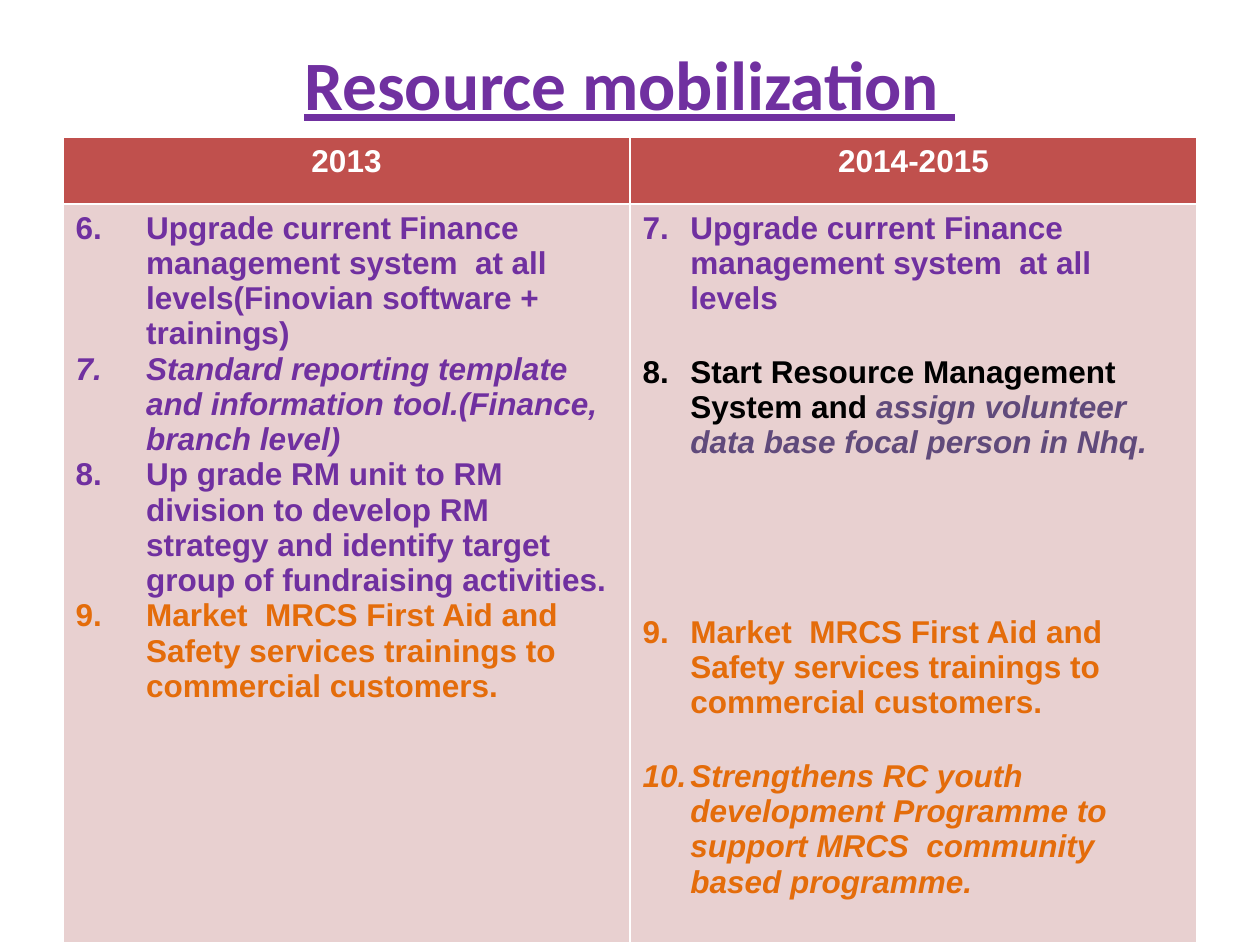
from pptx import Presentation
from pptx.dml.color import RGBColor
from pptx.enum.text import MSO_ANCHOR, PP_ALIGN
from pptx.oxml.ns import qn
from pptx.util import Inches, Pt
from lxml.etree import SubElement

PURPLE, ORANGE, BLACK, VIOLET = "7030A0", "E46C0A", "000000", "604A7B"
WHITE, RED, PINK = "FFFFFF", "C0504D", "E8D0D0"

TITLE = "Resource mobilization "
MARKET = "Market  MRCS First Aid and Safety services trainings to commercial customers."
COLUMNS = [
    {"heading": "2013", "start": 6, "indent": 0.56, "items": [
        (0, [("Upgrade current Finance management system  at all levels"
              "(Finovian software + trainings)", PURPLE, False)]),
        (0, [("Standard reporting template and information tool."
              "(Finance, branch level)", PURPLE, True)]),
        (0, [("Up grade RM unit to RM division to develop RM strategy and "
              "identify target group of fundraising activities.", PURPLE, False)]),
        (0, [(MARKET, ORANGE, False)]),
    ]},
    {"heading": "2014-2015", "start": 7, "indent": 0.38, "items": [
        (0, [("Upgrade current Finance management system  at all levels", PURPLE, False)]),
        (1, [("Start Resource Management System and ", BLACK, False),
             ("assign volunteer data base focal person in Nhq.", VIOLET, True)]),
        (4, [(MARKET, ORANGE, False)]),
        (1, [("Strengthens RC youth development Programme to support "
              "MRCS  community based programme.", ORANGE, True)]),
    ]},
]
ROW_HEIGHTS = [0.53, 5.86]
COLUMN_WIDTH = 4.5
GAP = 22


def color(code):
    return RGBColor.from_string(code)


def style(font, size, name, code):
    font.size, font.name, font.bold = Pt(size), name, True
    font.color.rgb = color(code)


def fill(cell, code):
    cell.fill.solid()
    cell.fill.fore_color.rgb = color(code)


def number(para, start, indent):
    properties = para._p.get_or_add_pPr()
    properties.set("marL", str(Inches(indent)))
    properties.set("indent", str(-Inches(indent)))
    SubElement(properties, qn("a:buFont"), typeface="+mj-lt")
    SubElement(properties, qn("a:buAutoNum"), type="arabicPeriod", startAt=str(start))


def add_title(page):
    title = page.shapes.title
    title.left, title.top = Inches(0.5), Inches(0.3)
    title.width, title.height = Inches(9), Inches(0.72)
    frame = title.text_frame
    frame.text = TITLE
    frame.vertical_anchor = MSO_ANCHOR.MIDDLE
    para = frame.paragraphs[0]
    para.alignment = PP_ALIGN.CENTER
    style(para.font, 39.6, "Calibri", PURPLE)
    para.font.underline = True


def fill_heading(cell, heading):
    fill(cell, RED)
    cell.text = heading
    para = cell.text_frame.paragraphs[0]
    para.alignment = PP_ALIGN.CENTER
    style(para.font, 18, "Arial", WHITE)


def fill_items(cell, column):
    fill(cell, PINK)
    frame = cell.text_frame
    for index, (gaps, spans) in enumerate(column["items"]):
        para = frame.add_paragraph() if index else frame.paragraphs[0]
        para.space_before = Pt(gaps * GAP)
        number(para, column["start"], column["indent"])
        for text, code, italic in spans:
            span = para.add_run()
            span.text = text
            style(span.font, 18, "Arial", code)
            span.font.italic = italic


def add_plan(page):
    table = page.shapes.add_table(
        len(ROW_HEIGHTS), len(COLUMNS), Inches(0.5), Inches(1.09),
        Inches(COLUMN_WIDTH * len(COLUMNS)), Inches(sum(ROW_HEIGHTS))).table
    for row, height in zip(table.rows, ROW_HEIGHTS):
        row.height = Inches(height)
    for index, column in enumerate(COLUMNS):
        table.columns[index].width = Inches(COLUMN_WIDTH)
        fill_heading(table.cell(0, index), column["heading"])
        fill_items(table.cell(1, index), column)


def main():
    deck = Presentation()
    deck.slide_width, deck.slide_height = Inches(10), Inches(7.5)
    page = deck.slides.add_slide(deck.slide_layouts[5])
    add_title(page)
    add_plan(page)
    deck.save("out.pptx")


if __name__ == "__main__":
    main()
